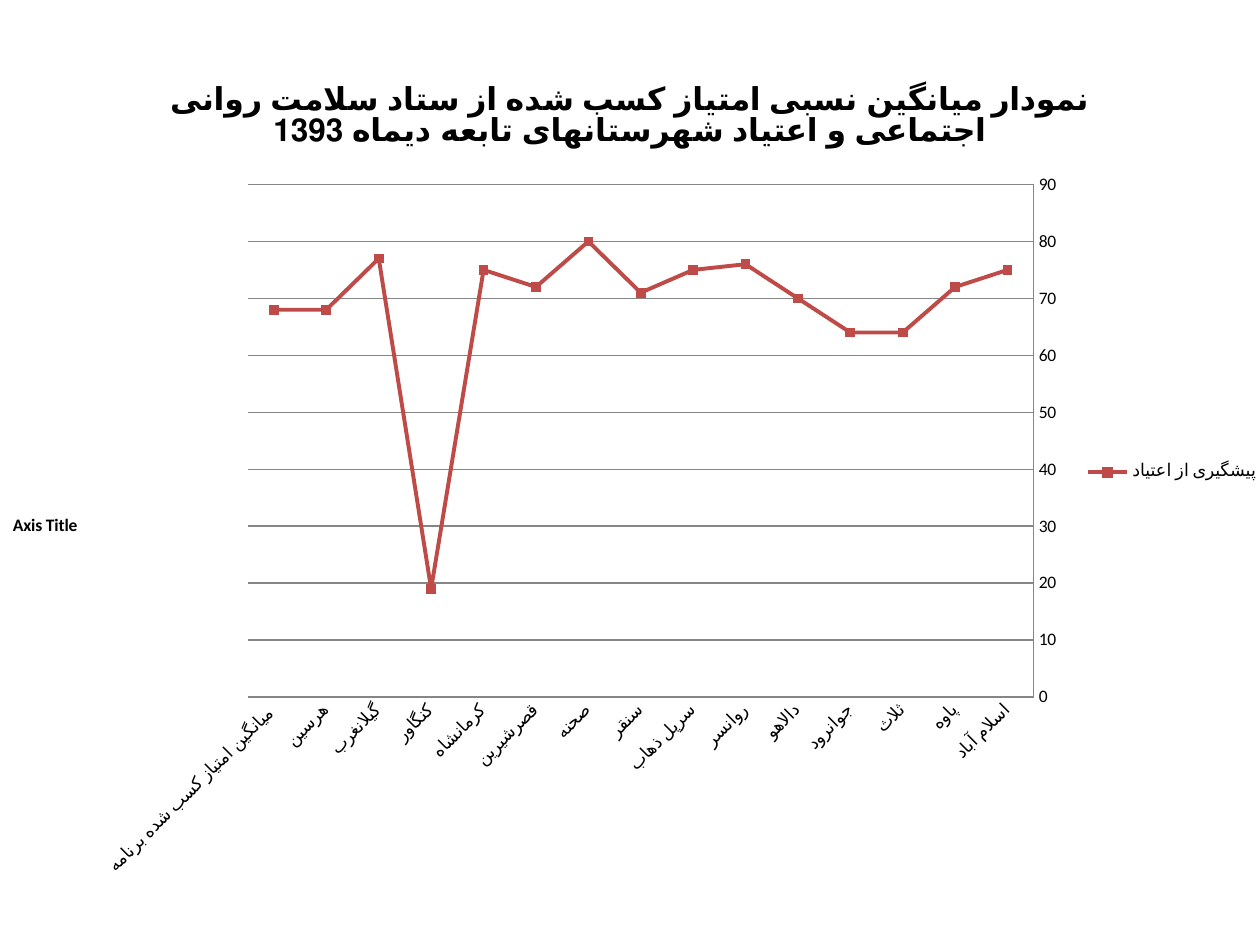
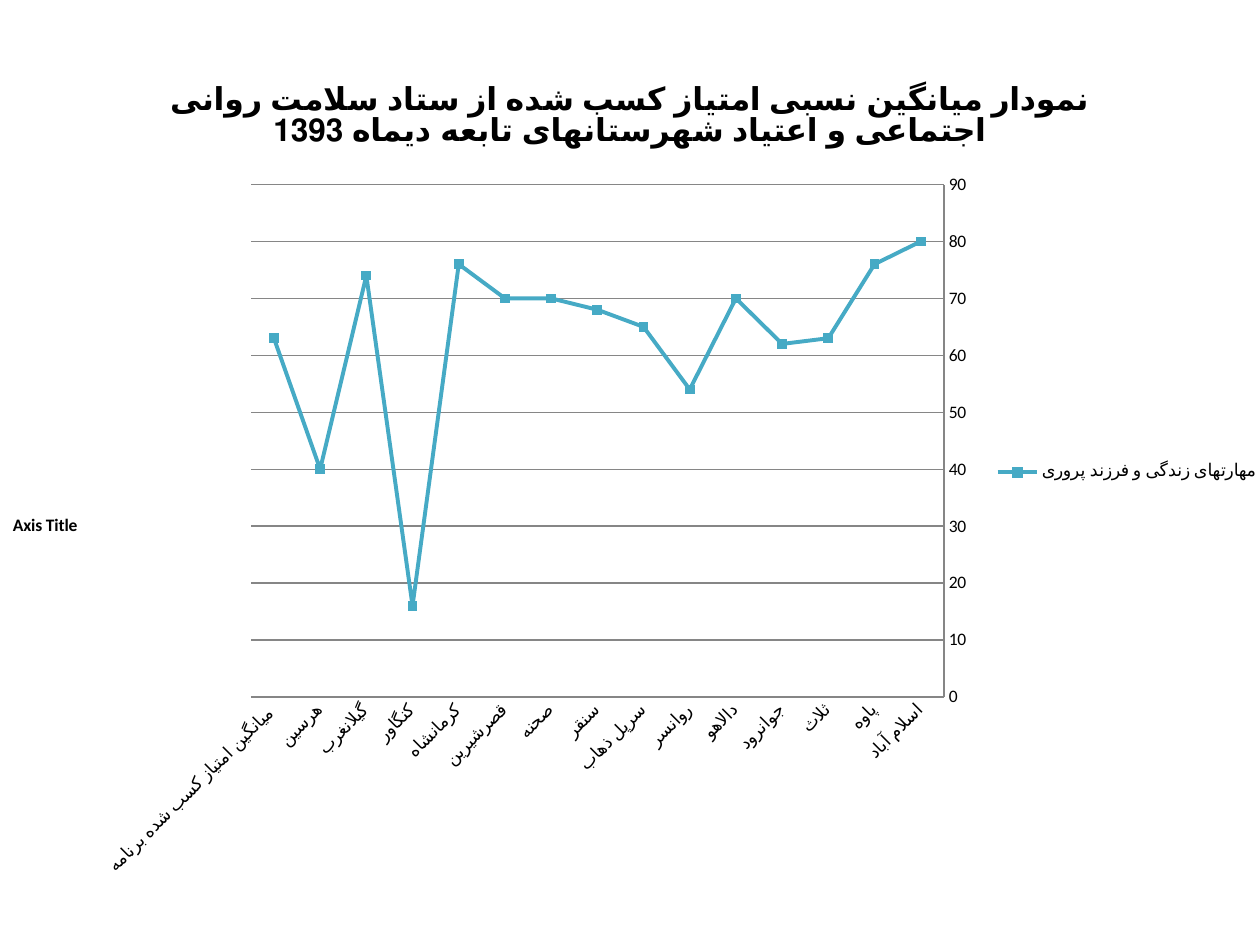
from pptx import Presentation
from pptx.chart.data import CategoryChartData
from pptx.dml.color import RGBColor
from pptx.enum.chart import (XL_CHART_TYPE, XL_LEGEND_POSITION,
                             XL_MARKER_STYLE, XL_TICK_MARK)
from pptx.util import Pt

LINE = XL_CHART_TYPE.LINE_MARKERS
RIGHT = XL_LEGEND_POSITION.RIGHT
SQUARE = XL_MARKER_STYLE.SQUARE
NONE = XL_TICK_MARK.NONE

BLACK = RGBColor(0x00, 0x00, 0x00)
GRAY = RGBColor(0x86, 0x86, 0x86)
RED = RGBColor(0xBE, 0x4B, 0x48)
TEAL = RGBColor(0x46, 0xAA, 0xC5)

BODY = {"name": "Calibri", "size": Pt(10)}
HEAD = {"name": "Calibri", "size": Pt(18), "bold": True}
LABEL = {"name": "Calibri", "size": Pt(10), "bold": True}

TITLE = ("نمودار میانگین نسبی امتیاز کسب شده از ستاد سلامت روانی "
         "اجتماعی و اعتیاد شهرستانهای تابعه دیماه 1393")
TOWNS = ["اسلام آباد", "پاوه", "ثلاث", "جوانرود", "دالاهو", "روانسر",
         "سرپل ذهاب", "سنقر", "صحنه", "قصرشیرین", "کرمانشاه", "کنگاور",
         "گیلانغرب", "هرسین", "میانگین امتیاز کسب شده برنامه "]
SCORES = [
    ("پیشگیری از اعتیاد", RED,
     [75, 72, 64, 64, 70, 76, 75, 71, 80, 72, 75, 19, 77, 68, 68]),
    ("مهارتهای زندگی و فرزند پروری", TEAL,
     [80, 76, 63, 62, 70, 54, 65, 68, 70, 70, 76, 16, 74, 40, 63]),
]


def style(font, look):
    for key, value in look.items():
        setattr(font, key, value)
    font.color.rgb = BLACK


def write(frame, text, look):
    frame.text = text
    style(frame.paragraphs[0].runs[0].font, look)


deck = Presentation()
deck.slide_width, deck.slide_height = Pt(720), Pt(540)
blank = deck.slide_layouts[6]

for name, color, values in SCORES:
    slide = deck.slides.add_slide(blank)
    data = CategoryChartData()
    data.categories = TOWNS
    data.add_series(name, values)
    chart = slide.shapes.add_chart(
        LINE, Pt(-7.2), Pt(30), Pt(734.4), Pt(480), data).chart
    style(chart.font, BODY)

    chart.has_title = True
    write(chart.chart_title.text_frame, TITLE, HEAD)
    for props in chart._chartSpace.xpath("c:chart/c:title//a:p/a:pPr"):
        props.set("rtl", "1")

    chart.has_legend = True
    chart.legend.position = RIGHT
    chart.legend.include_in_layout = False

    towns, scale = chart.category_axis, chart.value_axis
    for axis in (towns, scale):
        axis.major_tick_mark = axis.minor_tick_mark = NONE
        axis.format.line.color.rgb = GRAY
        axis.format.line.width = Pt(0.75)
    towns.reverse_order = True
    scale.minimum_scale, scale.maximum_scale = 0, 90
    scale.major_unit = 10
    scale.has_major_gridlines = True
    grid = scale.major_gridlines.format.line
    grid.color.rgb, grid.width = GRAY, Pt(0.75)

    # Keep the axis title horizontal
    write(scale.axis_title.text_frame, "Axis Title", LABEL)
    for body in chart._chartSpace.xpath(".//c:valAx/c:title//a:bodyPr"):
        body.set("rot", "0")
        body.set("vert", "horz")

    line = chart.plots[0].series[0]
    line.smooth = False
    line.format.line.color.rgb = color
    line.format.line.width = Pt(2.25)
    mark = line.marker
    mark.style, mark.size = SQUARE, 5
    mark.format.fill.solid()
    mark.format.fill.fore_color.rgb = color
    mark.format.line.color.rgb = color

deck.save("out.pptx")
